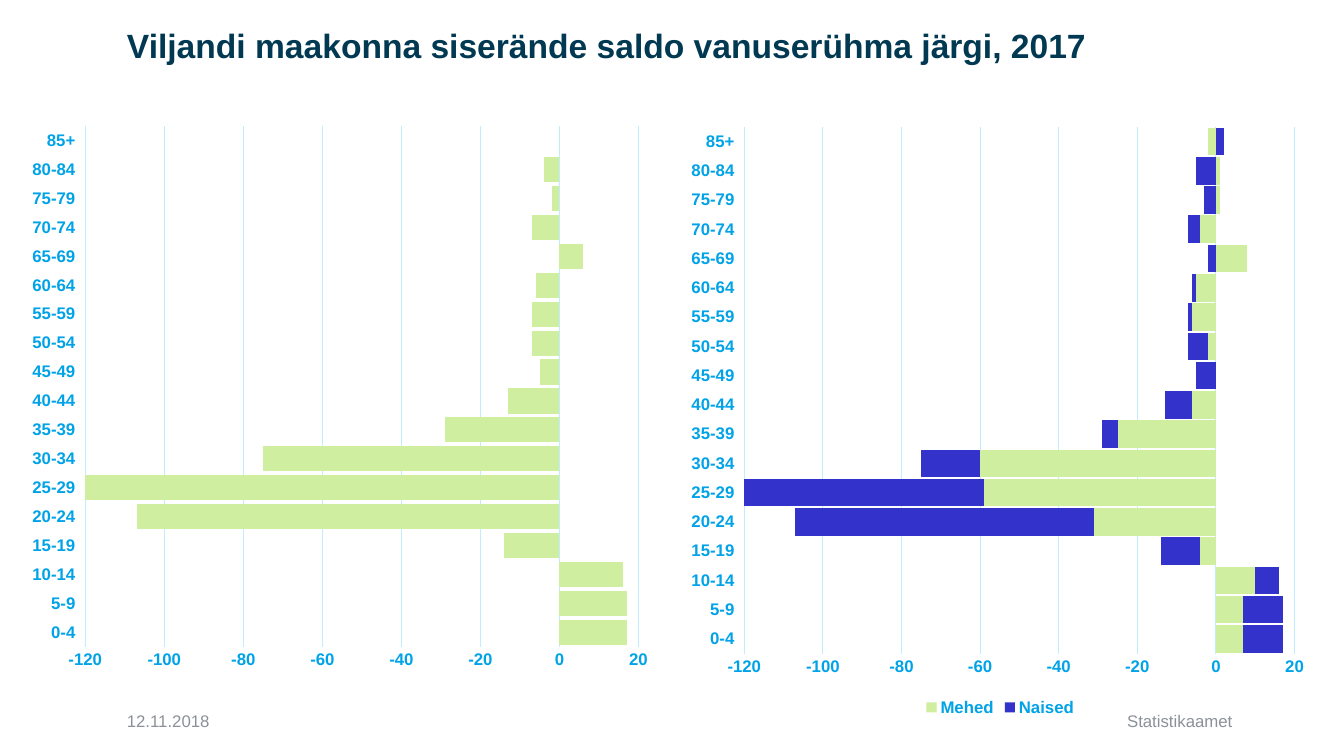
from dataclasses import dataclass

import pptx
import pptx.chart.data
import pptx.dml.color
import pptx.enum.chart
import pptx.enum.text
import pptx.oxml
import pptx.util

Pt = pptx.util.Pt
RGB = pptx.dml.color.RGBColor.from_string
Align = pptx.enum.text.PP_ALIGN
Kind = pptx.enum.chart.XL_CHART_TYPE


@dataclass(frozen=True)
class Theme:
    font: str = "Arial"
    navy: RGB = RGB("003951")
    label: RGB = RGB("00A3E7")
    grid: RGB = RGB("BFECFF")
    footer: RGB = RGB("8C9198")
    green: RGB = RGB("CFEEA0")
    blue: RGB = RGB("3333CC")
    title_size: int = 24
    text_size: int = 12
    chart_size: int = 10


THEME = Theme()
AGE_GROUPS = [f"{age}-{age + 4}" for age in range(0, 85, 5)] + ["85+"]
MEN = [7, 7, 10, -4, -31, -59, -60, -25, -6, 0, -2, -6, -5, 8, -4, 1, 1, -2]
WOMEN = [10, 10, 6, -10, -76, -61, -15, -4, -7, -5, -5, -1, -1, -2, -3, -3, -5, 2]
TOTAL = [men + women for men, women in zip(MEN, WOMEN)]


def set_font(font, size, color, bold=False):
    font.name = THEME.font
    font.size = Pt(size)
    font.bold = bold
    font.color.rgb = color


def place(shape, box):
    shape.left, shape.top, shape.width, shape.height = map(Pt, box)


def add_title(page, box, text):
    title = page.shapes.title
    place(title, box)
    frame = title.text_frame
    frame.text = text
    frame.auto_size = pptx.enum.text.MSO_AUTO_SIZE.NONE
    frame.vertical_anchor = pptx.enum.text.MSO_ANCHOR.MIDDLE
    para = frame.paragraphs[0]
    para.alignment = Align.LEFT
    para.line_spacing = 0.9
    set_font(para.font, THEME.title_size, THEME.navy, bold=True)


def add_footer(page, box, text, align):
    frame = page.shapes.add_textbox(*map(Pt, box)).text_frame
    frame.word_wrap = True
    frame.vertical_anchor = pptx.enum.text.MSO_ANCHOR.MIDDLE
    para = frame.paragraphs[0]
    para.text = text
    para.alignment = align
    set_font(para.font, THEME.text_size, THEME.footer)


def fix_plot_area(chart, fractions):
    """Pin the inner plot area to x, y, w, h fractions of the chart."""
    area = chart.element.chart.plotArea
    for old in area.xpath("c:layout"):
        area.remove(old)
    values = "".join(f'<c:{name} val="{value}"/>' for name, value in zip("xywh", fractions))
    area.insert(0, pptx.oxml.parse_xml(
        '<c:layout xmlns:c="http://schemas.openxmlformats.org/drawingml/2006/chart">'
        '<c:manualLayout><c:layoutTarget val="inner"/>'
        f'<c:xMode val="edge"/><c:yMode val="edge"/>{values}</c:manualLayout></c:layout>'))


def style_axes(chart):
    category_axis, value_axis = chart.category_axis, chart.value_axis
    for axis in (category_axis, value_axis):
        axis.major_tick_mark = axis.minor_tick_mark = pptx.enum.chart.XL_TICK_MARK.NONE
        set_font(axis.tick_labels.font, THEME.text_size, THEME.label, bold=True)
    category_axis.tick_label_position = pptx.enum.chart.XL_TICK_LABEL_POSITION.LOW
    value_axis.minimum_scale, value_axis.maximum_scale = -120, 20
    value_axis.major_unit = 20
    value_axis.tick_labels.number_format = "###0"
    value_axis.tick_labels.number_format_is_linked = False
    value_axis.format.line.fill.background()
    for line in (category_axis.format.line, value_axis.major_gridlines.format.line):
        line.color.rgb = THEME.grid
        line.width = Pt(0.75)


def add_age_chart(page, box, kind, series, gap, plot_height):
    """Draw horizontal bars by age group; series holds (name, values, color)."""
    data = pptx.chart.data.CategoryChartData()
    data.categories = AGE_GROUPS
    for name, values, _ in series:
        data.add_series(name, values)
    chart = page.shapes.add_chart(kind, *map(Pt, box), data).chart
    set_font(chart.font, THEME.chart_size, THEME.navy)
    chart.has_title = False
    chart.has_legend = len(series) > 1
    if chart.has_legend:
        chart.legend.position = pptx.enum.chart.XL_LEGEND_POSITION.BOTTOM
        chart.legend.include_in_layout = False
        set_font(chart.legend.font, THEME.text_size, THEME.label, bold=True)
    plot = chart.plots[0]
    plot.gap_width = gap
    plot.vary_by_categories = False
    if kind == Kind.BAR_STACKED:
        plot.overlap = 100
    for bars, (_, _, color) in zip(plot.series, series):
        bars.invert_if_negative = False
        bars.format.fill.solid()
        bars.format.fill.fore_color.rgb = color
    style_axes(chart)
    fix_plot_area(chart, (0.1, 0.02, 0.86, plot_height))


def build_slide(deck):
    page = deck.slides.add_slide(deck.slide_layouts.get_by_name("Title Only"))
    add_title(page, (83.5, 0, 804, 67.5),
              "Viljandi maakonna siserände saldo vanuserühma järgi, 2017")
    add_age_chart(page, (15, 82, 459.5, 404.5), Kind.BAR_CLUSTERED,
                  [("Kokku", TOTAL, THEME.green)], gap=15, plot_height=0.92)
    add_footer(page, (83.5, 500.5, 199, 29), "12.11.2018", Align.LEFT)
    add_footer(page, (318, 500.5, 569.5, 29), "Statistikaamet", Align.RIGHT)
    add_age_chart(page, (486, 82, 457, 432.5), Kind.BAR_STACKED,
                  [("Mehed", MEN, THEME.green), ("Naised", WOMEN, THEME.blue)],
                  gap=6, plot_height=0.87)


def main():
    deck = pptx.Presentation()
    deck.slide_width, deck.slide_height = Pt(960), Pt(540)
    build_slide(deck)
    deck.save("out.pptx")


if __name__ == "__main__":
    main()
